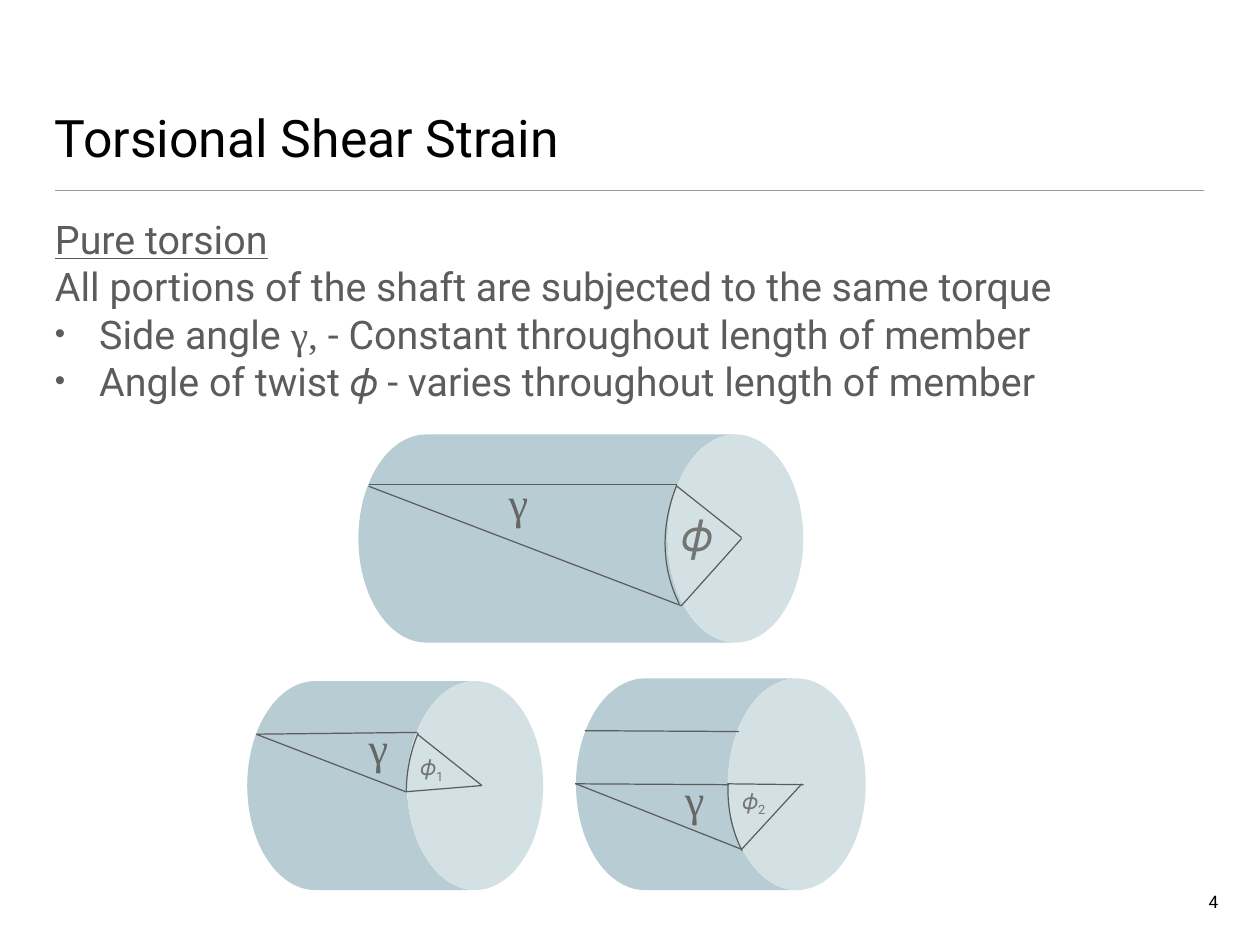
from dataclasses import dataclass

from lxml.etree import SubElement
from pptx import Presentation
from pptx.dml.color import RGBColor
from pptx.enum.shapes import MSO_CONNECTOR, MSO_SHAPE
from pptx.enum.text import MSO_ANCHOR, MSO_AUTO_SIZE, PP_ALIGN
from pptx.oxml.ns import qn
from pptx.shapes.autoshape import Shape
from pptx.slide import Slide
from pptx.text.text import TextFrame, _Paragraph, _Run
from pptx.util import Inches, Length, Pt

CELL = Inches(0.1)
COLUMNS, ROWS = 142.2, 106.7
MARGIN, CONTENT_COLUMNS = 6.2, 129.7

BLACK = RGBColor(0x00, 0x00, 0x00)
RULE_GRAY = RGBColor(0x9A, 0x9A, 0x9A)
TEXT_GRAY = RGBColor(0x5C, 0x5C, 0x5C)
GAMMA_GRAY = RGBColor(0x66, 0x66, 0x66)
PHI_GRAY = RGBColor(0x74, 0x74, 0x74)
SHAFT_BLUE = RGBColor(0xB8, 0xCD, 0xD3)

SANS = "Roboto"
SERIF = "Times New Roman"
LID_DEPTH = 0.651
ARC_COLUMNS, ARC_ROWS, ARC_ROTATION = 37.1, 32.7, 325.8


@dataclass(frozen=True)
class Box:
    column: float
    row: float
    columns: float
    rows: float

    def lengths(self) -> tuple[Length, ...]:
        return tuple(cells(n) for n in (self.column, self.row, self.columns, self.rows))


@dataclass(frozen=True)
class Line:
    column: float
    row: float
    end_column: float
    end_row: float


@dataclass(frozen=True)
class Shaft:
    can: Box
    lines: tuple[Line, ...]
    arc_column: float
    arc_row: float
    arc_angles: tuple[float, float]


@dataclass(frozen=True)
class Label:
    box: Box
    symbol: str
    size: int
    font: str
    color: RGBColor
    subscript: str = ""


SHAFTS = (
    Shaft(
        Box(53.8, 35.7, 23.5, 50.2),
        (
            Line(41.6, 54.7, 76.4, 54.7),
            Line(41.6, 54.9, 76.9, 68.4),
            Line(76.4, 54.9, 83.7, 60.7),
            Line(76.9, 68.4, 83.7, 60.8),
        ),
        74.4, 43, (186.19, 212.54),
    ),
    Shaft(
        Box(32.8, 72, 23.6, 33.4),
        (
            Line(29, 82.9, 47.1, 82.7),
            Line(28.9, 82.9, 45.8, 89.4),
            Line(47.1, 82.9, 54.4, 88.7),
            Line(45.8, 89.4, 54.4, 88.7),
        ),
        45.2, 71, (186.19, 199.33),
    ),
    Shaft(
        Box(69.4, 72.2, 23.9, 32.7),
        (
            Line(66, 82.5, 83.4, 82.6),
            Line(65, 88.5, 83.7, 95.9),
            Line(82.1, 88.5, 90.7, 88.6),
            Line(83.7, 95.9, 90.5, 88.5),
            Line(64.9, 88.5, 82.3, 88.6),
        ),
        81.5, 70.9, (197.79, 212.54),
    ),
)

LABELS = (
    Label(Box(55.2, 53, 6.6, 7.2), "γ", 36, SERIF, GAMMA_GRAY),
    Label(Box(75.4, 56.7, 6.6, 7.2), "𝜙", 36, SANS, PHI_GRAY),
    Label(Box(39.4, 80.7, 6.6, 7.2), "γ", 36, SERIF, GAMMA_GRAY),
    Label(Box(75.1, 86.6, 6.6, 7.2), "γ", 36, SERIF, GAMMA_GRAY),
    Label(Box(45.3, 84.7, 6.9, 4.2), "𝜙", 18, SANS, PHI_GRAY, "1"),
    Label(Box(82, 88.5, 6.2, 4.2), "𝜙", 18, SANS, PHI_GRAY, "2"),
)

BULLETS = (
    (("Side angle ", SANS), ("γ, ", SERIF), ("- Constant throughout length of member", SANS)),
    (("Angle of twist 𝜙 - varies throughout length of member", SANS),),
)


def cells(count: float) -> Length:
    return Length(round(count * CELL))


def place(shape: Shape, box: Box) -> None:
    shape.left, shape.top, shape.width, shape.height = box.lengths()


def set_insets(text_frame: TextFrame, inset: Length) -> None:
    text_frame.margin_left = text_frame.margin_right = inset
    text_frame.margin_top = text_frame.margin_bottom = inset


def format_run(run: _Run, size: int, font: str, color: RGBColor) -> None:
    run.font.size = Pt(size)
    run.font.name = font
    run.font.color.rgb = color


def format_paragraph(paragraph: _Paragraph, bullet: bool) -> None:
    paragraph.alignment = PP_ALIGN.LEFT
    paragraph.space_before = Pt(0)
    properties = paragraph._p.get_or_add_pPr()
    indent = cells(5) if bullet else 0
    properties.set("marL", str(indent))
    properties.set("indent", str(-indent))
    if bullet:
        SubElement(properties, qn("a:buSzPct")).set("val", "75000")
        SubElement(properties, qn("a:buChar")).set("char", "•")
    else:
        SubElement(properties, qn("a:buNone"))


def add_title(slide: Slide) -> None:
    title = slide.shapes.title
    place(title, Box(MARGIN, 3.6, CONTENT_COLUMNS, 15.3))
    text_frame = title.text_frame
    text_frame.text = "Torsional Shear Strain"
    text_frame.auto_size = MSO_AUTO_SIZE.NONE
    text_frame.vertical_anchor = MSO_ANCHOR.BOTTOM
    set_insets(text_frame, 0)
    text_frame.paragraphs[0].alignment = PP_ALIGN.LEFT
    format_run(text_frame.paragraphs[0].runs[0], 42, SANS, BLACK)


def add_body(slide: Slide) -> None:
    body = slide.placeholders[1]
    place(body, Box(MARGIN, 24.3, CONTENT_COLUMNS, 72.9))
    text_frame = body.text_frame
    text_frame.auto_size = MSO_AUTO_SIZE.NONE
    set_insets(text_frame, 0)
    introduction = text_frame.paragraphs[0]
    introduction.text = "Pure torsion\vAll portions of the shaft are subjected to the same torque"
    format_paragraph(introduction, bullet=False)
    for run in introduction.runs:
        format_run(run, 32, SANS, TEXT_GRAY)
    introduction.runs[0].font.underline = True
    for spans in BULLETS:
        paragraph = text_frame.add_paragraph()
        format_paragraph(paragraph, bullet=True)
        for text, font in spans:
            run = paragraph.add_run()
            run.text = text
            format_run(run, 32, font, TEXT_GRAY)


def add_line(slide: Slide, line: Line, color: RGBColor) -> None:
    ends = (line.column, line.row, line.end_column, line.end_row)
    connector = slide.shapes.add_connector(MSO_CONNECTOR.STRAIGHT, *map(cells, ends))
    connector.line.color.rgb = color
    connector.line.width = Pt(1)
    SubElement(connector._element.spPr, qn("a:effectLst"))


def add_shaft(slide: Slide, shaft: Shaft) -> None:
    can = slide.shapes.add_shape(MSO_SHAPE.CAN, *shaft.can.lengths())
    can.rotation = 90
    can.adjustments[0] = LID_DEPTH
    can.shadow.inherit = False
    can.fill.solid()
    can.fill.fore_color.rgb = SHAFT_BLUE
    can.line.fill.background()
    for line in shaft.lines:
        add_line(slide, line, TEXT_GRAY)
    arc_box = Box(shaft.arc_column, shaft.arc_row, ARC_COLUMNS, ARC_ROWS)
    arc = slide.shapes.add_shape(MSO_SHAPE.ARC, *arc_box.lengths())
    arc.rotation = ARC_ROTATION
    arc._element.spPr.find(qn("a:xfrm")).set("flipH", "1")
    arc.adjustments[0], arc.adjustments[1] = shaft.arc_angles
    arc.shadow.inherit = False
    arc.fill.background()
    arc.line.color.rgb = TEXT_GRAY
    arc.line.width = Pt(1)


def add_label(slide: Slide, label: Label) -> None:
    text_frame = slide.shapes.add_textbox(*label.box.lengths()).text_frame
    text_frame.word_wrap = True
    text_frame.vertical_anchor = MSO_ANCHOR.MIDDLE
    set_insets(text_frame, cells(0.6))
    paragraph = text_frame.paragraphs[0]
    paragraph.text = label.symbol
    paragraph.alignment = PP_ALIGN.CENTER
    if label.subscript:
        subscript = paragraph.add_run()
        subscript.text = label.subscript
        subscript._r.get_or_add_rPr().set("baseline", "-25000")
    for run in paragraph.runs:
        format_run(run, label.size, label.font, label.color)


def add_slide_number(slide: Slide) -> None:
    text_frame = slide.shapes.add_textbox(*Box(135.2, 100.6, 2.3, 3.3).lengths()).text_frame
    text_frame.text = "4"
    text_frame.word_wrap = False
    set_insets(text_frame, 0)
    text_frame.paragraphs[0].alignment = PP_ALIGN.RIGHT
    format_run(text_frame.paragraphs[0].runs[0], 14, SANS, BLACK)


def main() -> None:
    presentation = Presentation()
    presentation.slide_width, presentation.slide_height = cells(COLUMNS), cells(ROWS)
    slide = presentation.slides.add_slide(presentation.slide_layouts[1])
    add_line(slide, Line(MARGIN, 21.5, MARGIN + CONTENT_COLUMNS, 21.5), RULE_GRAY)
    add_title(slide)
    add_body(slide)
    add_slide_number(slide)
    for shaft in SHAFTS:
        add_shaft(slide, shaft)
    for label in LABELS:
        add_label(slide, label)
    presentation.save("out.pptx")


if __name__ == "__main__":
    main()
